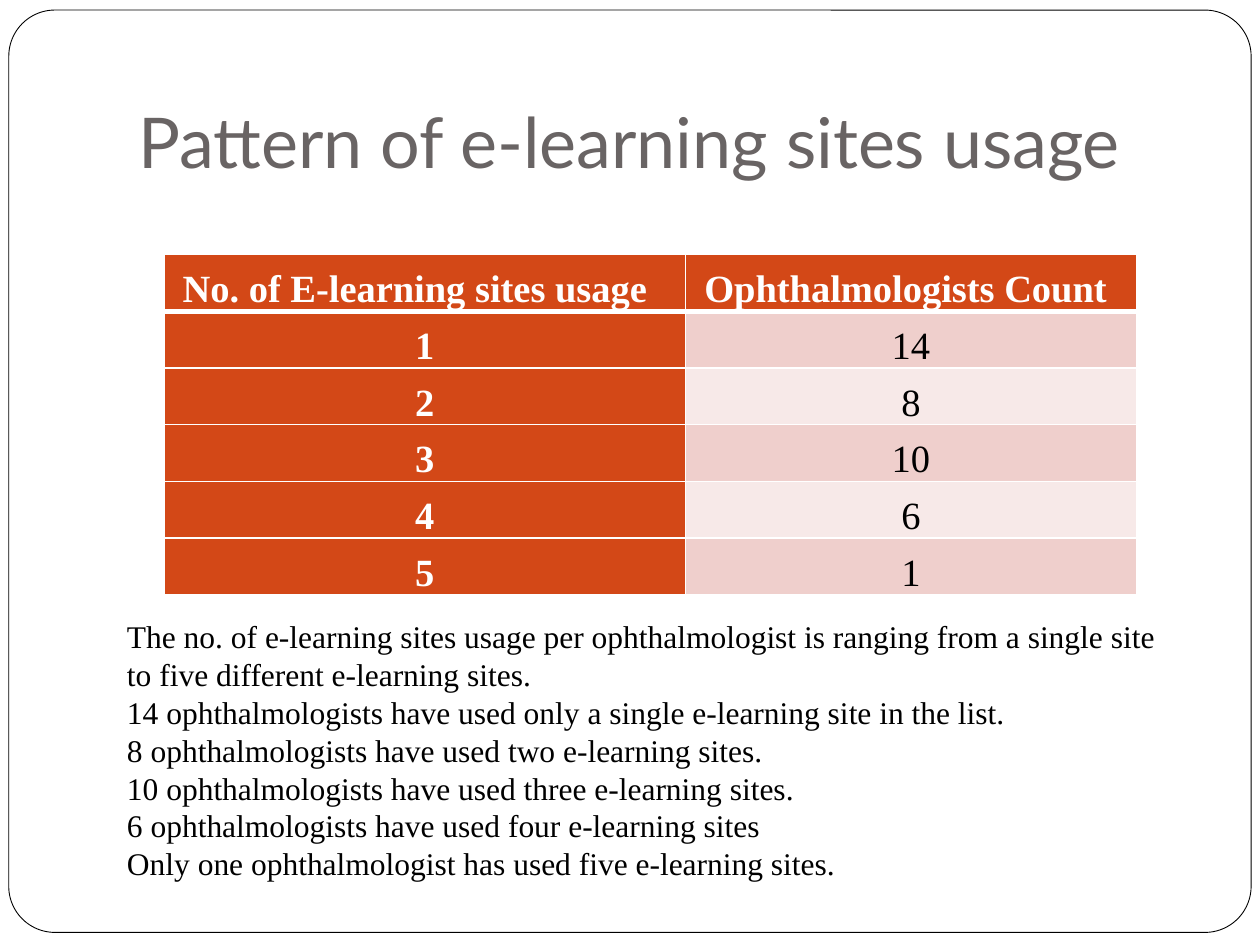
from lxml import etree
from pptx import Presentation
from pptx.dml.color import RGBColor
from pptx.enum import shapes, text
from pptx.oxml import ns
from pptx.util import Inches, Pt

COLORS = {
    "white": "FFFFFF",
    "black": "000000",
    "title": "696464",
    "accent": "D34817",
    "band_dark": "EFCFCC",
    "band_light": "F7E9E8",
}
SERIF = "Times New Roman"


def add_run(paragraph, content, size, font, color, bold=False):
    run = paragraph.add_run()
    run.text = content
    run.font.size = Pt(size)
    run.font.name = font
    run.font.bold = bold
    run.font.color.rgb = RGBColor.from_string(COLORS[color])


def add_borders(cell, widths):
    properties = cell._tc.get_or_add_tcPr()
    for index, (side, width) in enumerate(widths.items()):
        line = etree.Element(ns.qn(f"a:ln{side}"), w=str(Pt(width)))
        fill = etree.SubElement(line, ns.qn("a:solidFill"))
        etree.SubElement(fill, ns.qn("a:srgbClr"), val=COLORS["white"])
        properties.insert(index, line)


presentation = Presentation()
presentation.slide_width = Inches(10)
presentation.slide_height = Inches(7.5)
slide = presentation.slides.add_slide(presentation.slide_layouts[6])

frame = slide.shapes.add_shape(
    shapes.MSO_SHAPE.ROUNDED_RECTANGLE,
    Inches(0.07), Inches(0.08), Inches(9.86), Inches(7.32),
)
frame.adjustments[0] = 0.05
frame.shadow.inherit = False
frame.fill.solid()
frame.fill.fore_color.rgb = RGBColor.from_string(COLORS["white"])
frame.line.color.rgb = RGBColor.from_string(COLORS["black"])
frame.line.width = Pt(0.5)

title = slide.shapes.add_textbox(Inches(1), Inches(0.3), Inches(8.5), Inches(1.25))
title.text_frame.word_wrap = True
title.text_frame.vertical_anchor = text.MSO_ANCHOR.BOTTOM
title.text_frame.margin_bottom = Inches(0.1)
add_run(title.text_frame.paragraphs[0], "Pattern of e-learning sites usage", 40, "Lato", "title")

rows = [
    ("No. of E-learning sites usage", "Ophthalmologists Count"),
    ("1", "14"),
    ("2", "8"),
    ("3", "10"),
    ("4", "6"),
    ("5", "1"),
]
table = slide.shapes.add_table(
    len(rows), 2, Inches(1.3), Inches(2.02), Inches(7.72), Inches(2.7)
).table
for column, width in zip(table.columns, (4.14, 3.58)):
    column.width = Inches(width)

for row_index, values in enumerate(rows):
    table.rows[row_index].height = Inches(0.45)
    for column_index, value in enumerate(values):
        is_header = row_index == 0
        is_accent = is_header or column_index == 0
        band = "band_dark" if row_index % 2 else "band_light"
        cell = table.cell(row_index, column_index)
        cell.fill.solid()
        cell.fill.fore_color.rgb = RGBColor.from_string(COLORS["accent" if is_accent else band])
        cell.vertical_anchor = text.MSO_ANCHOR.BOTTOM
        cell.margin_left = cell.margin_right = Inches(0.15)
        cell.margin_top = cell.margin_bottom = 0
        add_borders(cell, {
            "L": 1,
            "R": 1,
            "T": 3 if row_index == 1 else 1,
            "B": 3 if is_header else 1,
        })
        paragraph = cell.text_frame.paragraphs[0]
        paragraph.line_spacing = 1.15
        paragraph.alignment = text.PP_ALIGN.LEFT if is_header else text.PP_ALIGN.CENTER
        add_run(paragraph, value, 22, SERIF, "white" if is_accent else "black", is_accent)

findings = [
    "The no. of e-learning sites usage per ophthalmologist is ranging from a single site to five different e-learning sites.",
    "14 ophthalmologists have used only a single e-learning site in the list.",
    "8 ophthalmologists have used two e-learning sites.",
    "10 ophthalmologists have used three e-learning sites.",
    "6 ophthalmologists have used four e-learning sites",
    "Only one ophthalmologist has used five e-learning sites.",
]
summary = slide.shapes.add_textbox(Inches(0.91), Inches(4.85), Inches(8.5), Inches(2.22))
summary.text_frame.word_wrap = True
summary.text_frame.auto_size = text.MSO_AUTO_SIZE.SHAPE_TO_FIT_TEXT
for index, finding in enumerate(findings):
    paragraph = summary.text_frame.add_paragraph() if index else summary.text_frame.paragraphs[0]
    add_run(paragraph, finding, 18, SERIF, "black")

presentation.save("out.pptx")
